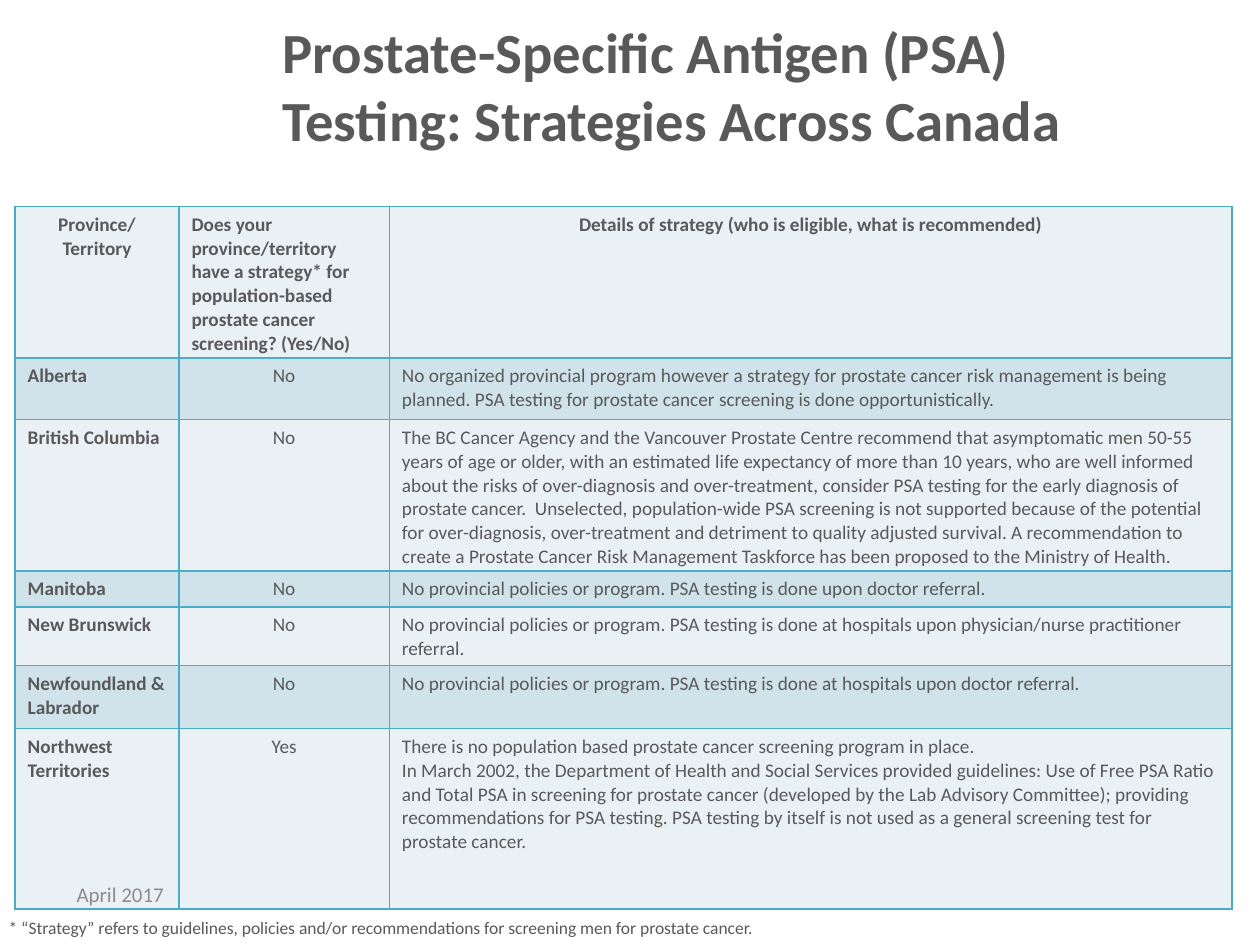
from lxml import etree
from pptx import Presentation
from pptx import util as u
from pptx.dml import color
from pptx.enum import text
from pptx.oxml import ns

GREY, TEAL = "595959", "4BACC6"
BANDS = ["E9F1F5", "D0E3EA"]
CENTER, LEFT = text.PP_ALIGN.CENTER, text.PP_ALIGN.LEFT


def rgb(value):
    return color.RGBColor.from_string(value)


def write(frame, words, size=11, bold=False, align=LEFT, ink=GREY,
          margin=None, anchor=text.MSO_ANCHOR.TOP):
    frame.word_wrap = True
    frame.vertical_anchor = anchor
    if margin is not None:
        frame.margin_left = frame.margin_right = margin
        frame.margin_top = frame.margin_bottom = margin
    frame.text = words
    for para in frame.paragraphs:
        para.alignment = align
        for span in para.runs:
            span.font.name = "Calibri"
            span.font.size = u.Pt(size)
            span.font.bold = bold
            span.font.color.rgb = rgb(ink)


deck = Presentation()
deck.slide_width, deck.slide_height = u.Inches(10), u.Inches(7.5)
page = deck.slides.add_slide(deck.slide_layouts[6])

title = page.shapes.add_textbox(u.Inches(2.24), u.Inches(0.13), u.Inches(7.26), u.Inches(1))
write(title.text_frame, "Prostate-Specific Antigen (PSA) Testing: Strategies Across Canada",
      size=32.4, bold=True, margin=0)

rows = [
    ("Province/\nTerritory",
     "Does your province/territory have a strategy* for population-based prostate cancer "
     "screening? (Yes/No)",
     "Details of strategy (who is eligible, what is recommended)"),
    ("Alberta", "No",
     "No organized provincial program however a strategy for prostate cancer risk management "
     "is being planned. PSA testing for prostate cancer screening is done opportunistically."),
    ("British Columbia", "No",
     "The BC Cancer Agency and the Vancouver Prostate Centre recommend that asymptomatic men "
     "50-55 years of age or older, with an estimated life expectancy of more than 10 years, "
     "who are well informed about the risks of over-diagnosis and over-treatment, consider "
     "PSA testing for the early diagnosis of prostate cancer.  Unselected, population-wide "
     "PSA screening is not supported because of the potential for over-diagnosis, "
     "over-treatment and detriment to quality adjusted survival. A recommendation to create a "
     "Prostate Cancer Risk Management Taskforce has been proposed to the Ministry of Health."),
    ("Manitoba", "No",
     "No provincial policies or program. PSA testing is done upon doctor referral."),
    ("New Brunswick", "No",
     "No provincial policies or program. PSA testing is done at hospitals upon "
     "physician/nurse practitioner referral."),
    ("Newfoundland & Labrador", "No",
     "No provincial policies or program. PSA testing is done at hospitals upon doctor "
     "referral."),
    ("Northwest Territories", "Yes",
     "There is no population based prostate cancer screening program in place.\n"
     "In March 2002, the Department of Health and Social Services provided guidelines: Use of "
     "Free PSA Ratio and Total PSA in screening for prostate cancer (developed by the Lab "
     "Advisory Committee); providing recommendations for PSA testing. PSA testing by itself "
     "is not used as a general screening test for prostate cancer."),
]
widths = [1.3, 1.67, 6.69]
heights = [1.14, 0.49, 1.14, 0.27, 0.44, 0.5, 1.43]
header_aligns = [CENTER, LEFT, CENTER]
body_aligns = [LEFT, CENTER, LEFT]

table = page.shapes.add_table(len(rows), len(widths), u.Inches(0.12), u.Inches(1.64),
                              u.Inches(sum(widths)), u.Inches(sum(heights))).table
for column, width in zip(table.columns, widths):
    column.width = u.Inches(width)
for r, (row, height) in enumerate(zip(rows, heights)):
    table.rows[r].height = u.Inches(height)
    for c, words in enumerate(row):
        cell = table.cell(r, c)
        aligns = body_aligns if r else header_aligns
        write(cell.text_frame, words, bold=r == 0 or c == 0, align=aligns[c])
        properties = cell._tc.get_or_add_tcPr()
        for side in ("lnL", "lnR", "lnT", "lnB"):
            line = etree.SubElement(properties, ns.qn("a:" + side), w=str(u.Pt(1)))
            fill = etree.SubElement(line, ns.qn("a:solidFill"))
            etree.SubElement(fill, ns.qn("a:srgbClr"), val=TEAL)
        cell.fill.solid()
        cell.fill.fore_color.rgb = rgb(BANDS[r % 2])

footnote = page.shapes.add_textbox(u.Inches(-0.03), u.Inches(7.23), u.Inches(7.45), u.Inches(0.27))
write(footnote.text_frame,
      "* “Strategy” refers to guidelines, policies and/or recommendations for screening men "
      "for prostate cancer.", size=10)

date = page.shapes.add_textbox(u.Inches(0.51), u.Inches(6.9), u.Inches(3.17), u.Inches(0.4))
write(date.text_frame, "April 2017", size=12, ink="8C8C8C", anchor=text.MSO_ANCHOR.MIDDLE)

deck.save("out.pptx")
